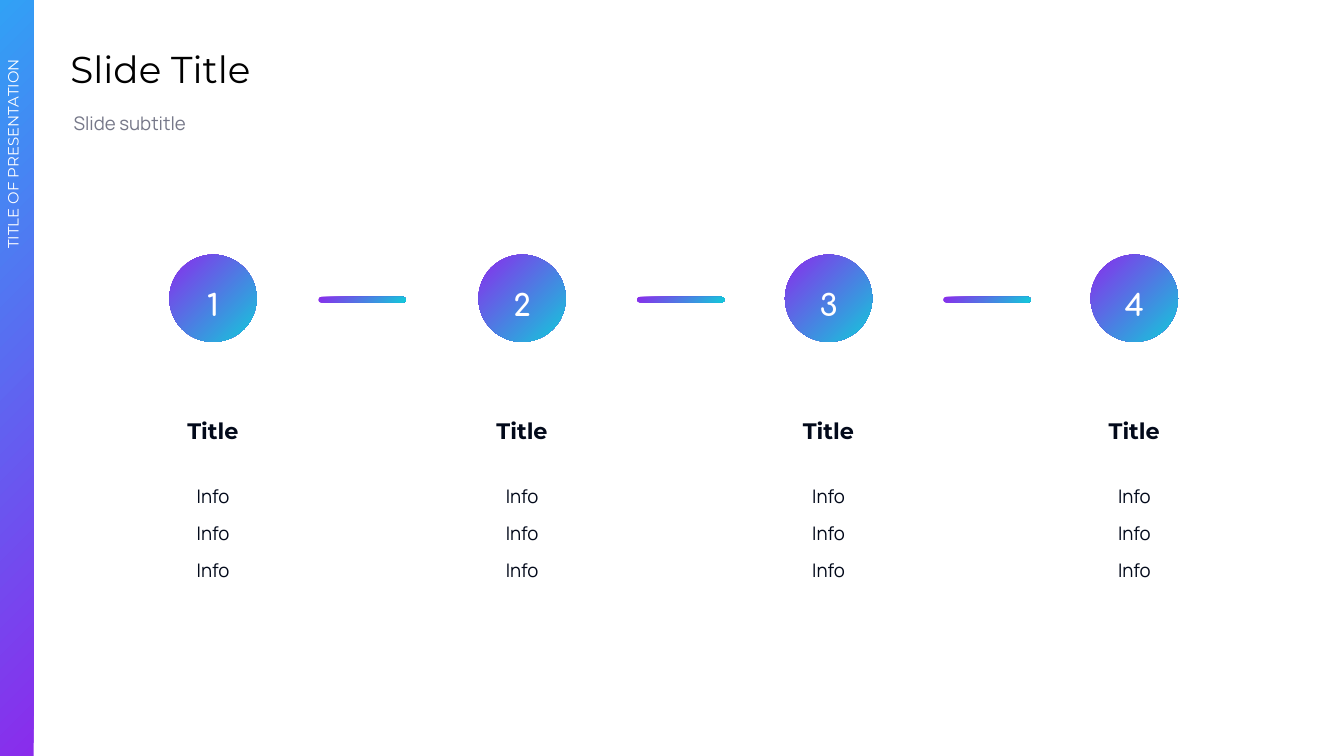
from dataclasses import dataclass

from pptx import Presentation
from pptx.dml.color import RGBColor
from pptx.enum.shapes import MSO_SHAPE as Preset
from pptx.enum.text import MSO_ANCHOR as Anchor, PP_ALIGN as Align
from pptx.shapes.autoshape import Shape
from pptx.slide import Slide
from pptx.util import Emu, Pt

EMU_PER_PX = 4572


@dataclass(frozen=True)
class TextStyle:
    font: str
    size: int
    color: str
    bold: bool = False
    align: Align = Align.LEFT
    line_spacing: float = 1.0
    gap: int = 0


@dataclass(frozen=True)
class Gradient:
    start: str
    end: str
    angle: int


@dataclass(frozen=True)
class Theme:
    title: TextStyle = TextStyle("Montserrat", 20, "000000")
    subtitle: TextStyle = TextStyle("Manrope", 10, "767889", line_spacing=1.15)
    number: TextStyle = TextStyle("Comfortaa", 16, "FFFFFF", True, Align.CENTER, 1.15)
    heading: TextStyle = TextStyle("Montserrat", 12, "02091A", True, Align.CENTER, 1.15)
    info: TextStyle = TextStyle("Manrope", 10, "02091A", False, Align.CENTER, 1.15, 6)
    side_label: TextStyle = TextStyle("Montserrat", 8, "FFFFFF", align=Align.RIGHT)
    step: Gradient = Gradient("8A2CEC", "13CADA", 315)
    side_bar: Gradient = Gradient("8A2CEC", "31A1F5", 135)


@dataclass(frozen=True)
class Box:
    left: int
    top: int
    width: int
    height: int

    def emu(self) -> tuple[Emu, ...]:
        return tuple(
            Emu(px * EMU_PER_PX)
            for px in (self.left, self.top, self.width, self.height)
        )


@dataclass(frozen=True)
class Step:
    number: str
    left: int
    heading: str = "Title"
    lines: tuple[str, ...] = ("Info", "Info", "Info")


THEME = Theme()
PAGE_WIDTH, PAGE_HEIGHT = 2000, 1125
INSET = Emu(20 * EMU_PER_PX)
CIRCLE = 130
COLUMN = 374
STEPS = (Step("1", 252), Step("2", 712), Step("3", 1168), Step("4", 1623))
DASH_LEFTS = (474, 948, 1404)


def add_text(
    page: Slide,
    box: Box,
    lines: tuple[str, ...],
    style: TextStyle,
    anchor: Anchor = Anchor.TOP,
) -> Shape:
    label = page.shapes.add_textbox(*box.emu())
    frame = label.text_frame
    frame.word_wrap = True
    frame.vertical_anchor = anchor
    frame.margin_left = frame.margin_right = INSET
    frame.margin_top = frame.margin_bottom = INSET
    frame.text = "\n".join(lines)
    for index, para in enumerate(frame.paragraphs):
        para.alignment = style.align
        para.line_spacing = style.line_spacing
        para.space_before = Pt(style.gap if index else 0)
        para.font.name = style.font
        para.font.size = Pt(style.size)
        para.font.bold = style.bold
        para.font.color.rgb = RGBColor.from_string(style.color)
    return label


def add_gradient_shape(
    page: Slide, preset: Preset, box: Box, gradient: Gradient
) -> Shape:
    shape = page.shapes.add_shape(preset, *box.emu())
    shape.shadow.inherit = False
    shape.line.fill.background()
    shape.fill.gradient()
    shape.fill.gradient_angle = gradient.angle
    for stop, color in zip(shape.fill.gradient_stops, (gradient.start, gradient.end)):
        stop.color.rgb = RGBColor.from_string(color)
    return shape


def add_step(page: Slide, step: Step) -> None:
    circle = Box(step.left, 379, CIRCLE, CIRCLE)
    column_left = step.left - (COLUMN - CIRCLE) // 2
    add_gradient_shape(page, Preset.OVAL, circle, THEME.step)
    add_text(page, Box(step.left, 399, CIRCLE, 70), (step.number,), THEME.number)
    add_text(
        page,
        Box(column_left, 582, COLUMN, 98),
        (step.heading,),
        THEME.heading,
        Anchor.BOTTOM,
    )
    add_text(page, Box(column_left, 697, COLUMN, 192), step.lines, THEME.info)


def add_dash(page: Slide, left: int) -> None:
    dash = add_gradient_shape(
        page, Preset.ROUNDED_RECTANGLE, Box(left, 442, CIRCLE, 8), THEME.step
    )
    dash.adjustments[0] = 0.5


def add_side_bar(page: Slide) -> None:
    bar = Box(0, 0, 50, PAGE_HEIGHT)
    add_gradient_shape(page, Preset.RECTANGLE, bar, THEME.side_bar)
    label = add_text(
        page, Box(-452, 512, 956, 68), ("TITLE OF PRESENTATION",), THEME.side_label
    )
    label.rotation = 270


def main() -> None:
    deck = Presentation()
    deck.slide_width = Emu(PAGE_WIDTH * EMU_PER_PX)
    deck.slide_height = Emu(PAGE_HEIGHT * EMU_PER_PX)
    page = deck.slides.add_slide(deck.slide_layouts[6])
    add_text(page, Box(85, 48, 1864, 112), ("Slide Title",), THEME.title)
    add_text(page, Box(90, 142, 1818, 112), ("Slide subtitle",), THEME.subtitle)
    for step in STEPS:
        add_step(page, step)
    for left in DASH_LEFTS:
        add_dash(page, left)
    add_side_bar(page)
    deck.save("out.pptx")


if __name__ == "__main__":
    main()
